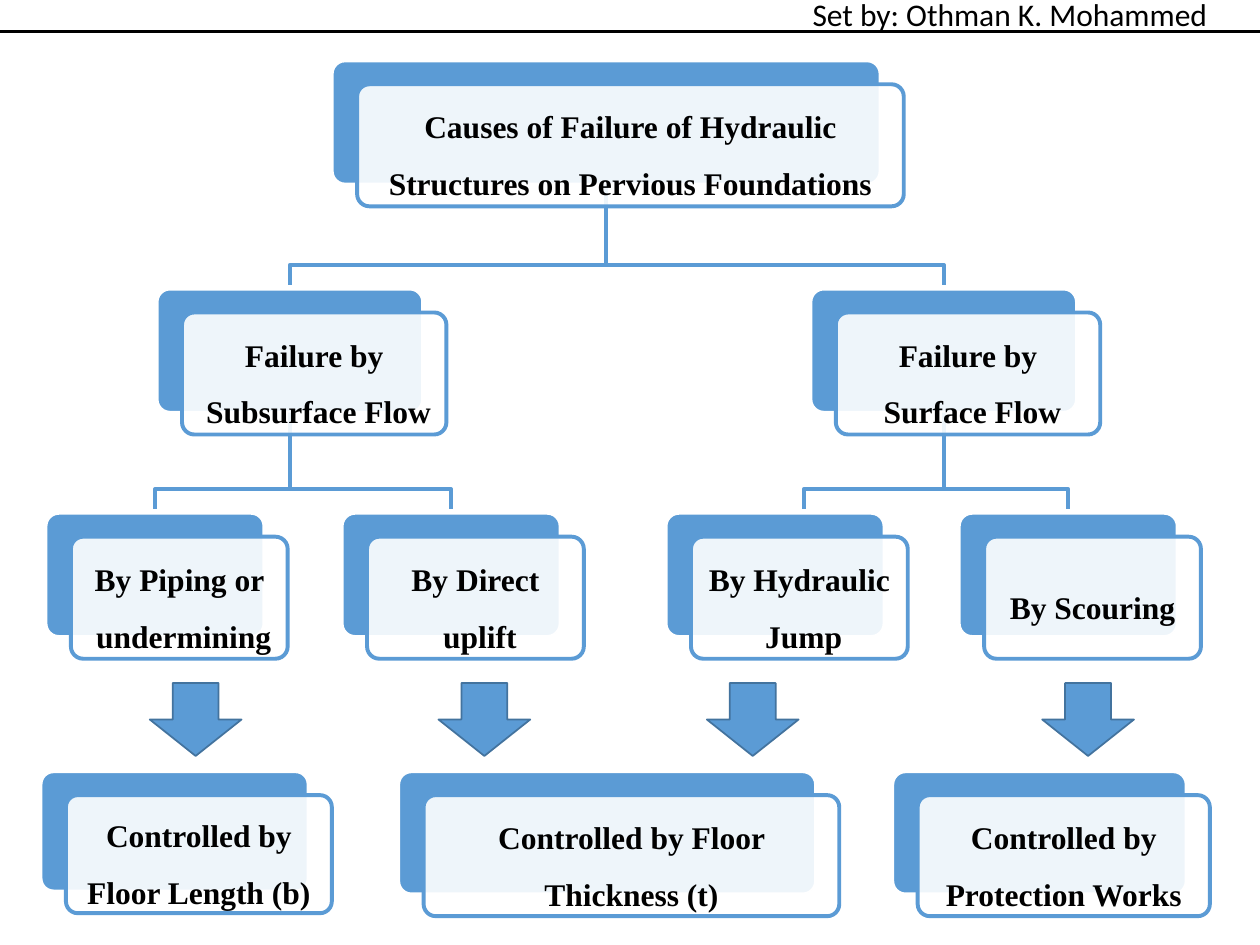
from lxml.etree import SubElement
from pptx import Presentation
from pptx.dml.color import RGBColor
from pptx.enum.shapes import MSO_CONNECTOR as Connector, MSO_SHAPE as Shape
from pptx.enum.text import MSO_ANCHOR as Anchor, MSO_AUTO_SIZE as AutoSize, PP_ALIGN as Align
from pptx.oxml.ns import qn
from pptx.util import Cm, Pt

BLUE = RGBColor(0x5B, 0x9B, 0xD5)
DARK_BLUE = RGBColor(0x43, 0x73, 0x9E)
WHITE = RGBColor(0xFF, 0xFF, 0xFF)
BLACK = RGBColor(0, 0, 0)

CARD_FONT = {"name": "Times New Roman", "size": Pt(18), "bold": True}
HEADER_FONT = {"name": "Calibri", "size": Pt(18)}
CARD_FRAME = {"word_wrap": True, "vertical_anchor": Anchor.MIDDLE,
              "margin_left": Cm(0.2), "margin_right": Cm(0.2),
              "margin_top": Cm(0.2), "margin_bottom": Cm(0.2)}
CARD_PARA = {"alignment": Align.CENTER, "line_spacing": 1.5, "space_after": Pt(6.3)}

SHIFT_X, SHIFT_Y = 0.49, 0.46
CARD_HEIGHT = 2.46
ROOT = (6.71, 1.24, 11.02, CARD_HEIGHT)
FLOWS = [(x, 5.84, 5.33, CARD_HEIGHT) for x in (3.18, 16.36)]
MODES = [(x, 10.36, 4.37, CARD_HEIGHT) for x in (0.94, 6.91, 13.44, 19.35)]
CONTROLS = [(0.84, 15.57, 5.36, 2.38), (8.05, 15.57, 8.38, 2.44), (18.01, 15.57, 5.89, 2.44)]
ARROWS = [(x, 13.77, 1.85, 1.47) for x in (3.02, 8.84, 14.25, 21.01)]

CARDS = [
    (ROOT, "Causes of Failure of Hydraulic Structures on Pervious Foundations"),
    (FLOWS[0], "Failure by Subsurface Flow "),
    (MODES[0], "By Piping or undermining "),
    (CONTROLS[0], "Controlled by Floor Length (b)"),
    (MODES[1], "By Direct uplift "),
    (CONTROLS[1], "Controlled by Floor Thickness (t)"),
    (FLOWS[1], "Failure by Surface Flow "),
    (MODES[2], "By Hydraulic Jump "),
    (MODES[3], "By Scouring"),
    (CONTROLS[2], "Controlled by Protection Works"),
]
BRANCHES = [
    (FLOWS[1], MODES[3], 0),
    (FLOWS[1], MODES[2], 0.58),
    (ROOT, FLOWS[1], 0),
    (FLOWS[0], MODES[1], 0),
    (FLOWS[0], MODES[0], 0),
    (ROOT, FLOWS[0], 0),
]


def apply(target, formats):
    for name, value in formats.items():
        setattr(target, name, value)


def paint(shape, fill, line, width):
    shape.shadow.inherit = False
    if fill is None:
        shape.fill.background()
    else:
        shape.fill.solid()
        shape.fill.fore_color.rgb = fill
    shape.line.color.rgb = line
    shape.line.width = Pt(width)


def write(frame, text, para_formats, font):
    para = frame.paragraphs[0]
    apply(para, para_formats)
    span = para.add_run()
    span.text = text
    apply(span.font, font)
    span.font.color.rgb = BLACK
    return para


def add_preset(page, kind, box, fill, line, width):
    shape = page.shapes.add_shape(kind, *map(Cm, box))
    paint(shape, fill, line, width)
    return shape


def add_branch(page, parent, child, drop_shift):
    start_x = parent[0] + parent[2] / 2
    end_x = child[0] + child[2] / 2 + drop_shift
    start_y, end_y = parent[1] + parent[3], child[1] - 0.09
    bend_y = end_y - 0.41
    builder = page.shapes.build_freeform(Cm(start_x), Cm(start_y))
    builder.add_line_segments(
        [(Cm(x), Cm(y)) for x, y in ((start_x, bend_y), (end_x, bend_y), (end_x, end_y))],
        close=False)
    paint(builder.convert_to_shape(), None, BLUE, 2.25)


def add_card(page, box, text):
    left, top, width, height = box
    back = add_preset(page, Shape.ROUNDED_RECTANGLE, box, BLUE, WHITE, 1)
    front = add_preset(page, Shape.ROUNDED_RECTANGLE,
                       (left + SHIFT_X, top + SHIFT_Y, width, height), WHITE, BLUE, 2.25)
    for shape in (back, front):
        shape.adjustments[0] = 0.1
    color = front.fill._xPr.find(qn("a:solidFill"))[0]
    SubElement(color, qn("a:alpha"), val="90000")
    apply(front.text_frame, CARD_FRAME)
    para = write(front.text_frame, text, CARD_PARA, CARD_FONT)
    para._p.get_or_add_pPr().set("rtl", "1")


def add_header(page, box, rule_y, rule_width):
    frame = page.shapes.add_textbox(*map(Cm, box)).text_frame
    apply(frame, {"word_wrap": True, "auto_size": AutoSize.SHAPE_TO_FIT_TEXT})
    write(frame, "Set by: Othman K. Mohammed", {"alignment": Align.RIGHT}, HEADER_FONT)
    rule = page.shapes.add_connector(Connector.STRAIGHT, 0, Cm(rule_y), Cm(rule_width), Cm(rule_y))
    rule.line.color.rgb = BLACK
    rule.line.width = Pt(1.5)
    SubElement(rule._element.spPr, qn("a:effectLst"))


def main():
    deck = Presentation()
    deck.slide_width, deck.slide_height = Cm(25.4), Cm(19.05)
    page = deck.slides.add_slide(deck.slide_layouts[6])
    for parent, child, drop_shift in BRANCHES:
        add_branch(page, parent, child, drop_shift)
    for box, text in CARDS:
        add_card(page, box, text)
    for box in ARROWS:
        add_preset(page, Shape.DOWN_ARROW, box, BLUE, DARK_BLUE, 1)
    add_header(page, (15.65, -0.23, 8.94, 1.02), 0.64, 25.4)
    deck.save("out.pptx")


if __name__ == "__main__":
    main()
